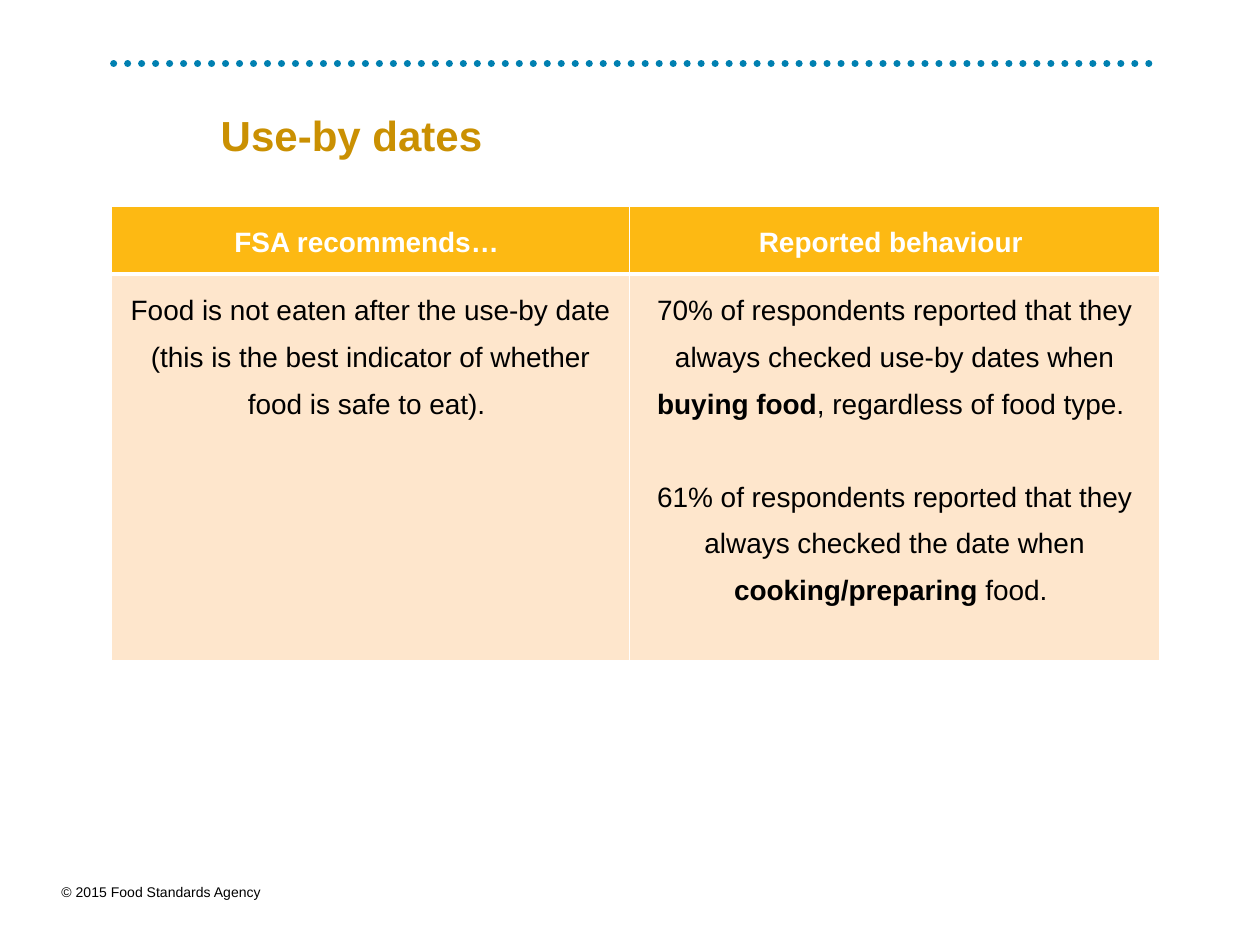
from lxml.etree import SubElement
from pptx import Presentation
from pptx.dml.color import RGBColor
from pptx.enum.dml import MSO_LINE
from pptx.enum.shapes import MSO_CONNECTOR
from pptx.enum.text import MSO_ANCHOR, MSO_AUTO_SIZE, PP_ALIGN
from pptx.oxml import parse_xml
from pptx.oxml.ns import nsdecls, qn
from pptx.util import Cm, Pt

TITLE = "Use-by dates"
CREDIT = "© 2015 Food Standards Agency"
HEADS = ["FSA recommends… ", "Reported behaviour "]
BODY = [
    [[("Food is not eaten after the use-by date (this is the best "
       "indicator of whether food is safe to eat). ", False)]],
    [[("70% of respondents reported that they always checked use-by "
       "dates when ", False),
      ("buying food", True),
      (", regardless of food type. ", False)],
     [("61% of respondents reported that they always checked the date "
       "when ", False),
      ("cooking/preparing ", True),
      ("food. ", False)]],
]
ROWS = [[[[(head, True)]] for head in HEADS], BODY]
WIDTHS = [10.44, 10.69]
HEIGHTS = [1.37, 7.8]
COLORS = {"dots": "0080B1", "title": "CA9002", "head": "FDB913",
          "body": "FEE6CC", "white": "FFFFFF", "black": "000000"}


def color(name):
    """Return the named colour."""
    return RGBColor.from_string(COLORS[name])


def style(para, size, tint, bold=None):
    """Set the font of a paragraph."""
    font = para.font
    font.name, font.size, font.bold = "Arial", Pt(size), bold
    font.color.rgb = color(tint)


def edge(cell, base):
    """Draw white borders round a cell, the lower one base points wide."""
    props = cell._tc.get_or_add_tcPr()
    for spot, (side, width) in enumerate(
            [("L", 1), ("R", 1), ("T", 1), ("B", base)]):
        props.insert(spot, parse_xml(
            f'<a:ln{side} {nsdecls("a")} w="{Pt(width)}"><a:solidFill>'
            f'<a:srgbClr val="{COLORS["white"]}"/></a:solidFill></a:ln{side}>'))


def write(cell, paras, tint):
    """Fill a cell with centred paragraphs of plain and bold runs."""
    frame = cell.text_frame
    for spot, runs in enumerate(paras):
        para = frame.add_paragraph() if spot else frame.paragraphs[0]
        para.alignment, para.line_spacing = PP_ALIGN.CENTER, 1.5
        if spot:
            para.space_before = Pt(26.6)
        style(para, 16, tint)
        for text, bold in runs:
            run = para.add_run()
            run.text, run.font.bold = text, bold


def main():
    """Build the slide on use-by dates."""
    deck = Presentation()
    deck.slide_width, deck.slide_height = Cm(25.4), Cm(19.05)
    slide = deck.slides.add_slide(deck.slide_layouts[5])
    shapes = slide.shapes

    rule = shapes.add_connector(
        MSO_CONNECTOR.STRAIGHT, Cm(2.29), Cm(1.28), Cm(23.19), Cm(1.28))
    rule.line.color.rgb = color("dots")
    rule.line.width = Pt(4)
    rule.line.dash_style = MSO_LINE.ROUND_DOT
    rule.line._get_or_add_ln().set("cap", "rnd")
    SubElement(rule._element.spPr, qn("a:effectLst"))

    note = shapes.add_textbox(Cm(0.99), Cm(17.68), Cm(4.6), Cm(0.61))
    note.text_frame.word_wrap = False
    note.text_frame.auto_size = MSO_AUTO_SIZE.SHAPE_TO_FIT_TEXT
    note.text_frame.text = CREDIT
    style(note.text_frame.paragraphs[0], 8, "black")

    title = shapes.title
    title.left, title.top = Cm(4.45), Cm(1.45)
    title.width, title.height = Cm(18.72), Cm(2.67)
    frame = title.text_frame
    frame.text = TITLE
    frame.auto_size = MSO_AUTO_SIZE.NONE
    frame.vertical_anchor = MSO_ANCHOR.MIDDLE
    frame.margin_left = frame.margin_right = 0
    frame.margin_top = frame.margin_bottom = 0
    para = frame.paragraphs[0]
    para.alignment, para.line_spacing = PP_ALIGN.LEFT, 0.9
    style(para, 24, "title", True)

    table = shapes.add_table(
        len(ROWS), len(WIDTHS), Cm(2.25), Cm(4.15),
        Cm(sum(WIDTHS)), Cm(sum(HEIGHTS))).table
    for col, width in zip(table.columns, WIDTHS):
        col.width = Cm(width)
    looks = [("head", "white", 3), ("body", "black", 1)]
    for y, (fill, tint, base) in enumerate(looks):
        table.rows[y].height = Cm(HEIGHTS[y])
        for x, paras in enumerate(ROWS[y]):
            cell = table.cell(y, x)
            cell.fill.solid()
            cell.fill.fore_color.rgb = color(fill)
            edge(cell, base)
            write(cell, paras, tint)

    deck.save("out.pptx")


if __name__ == "__main__":
    main()
